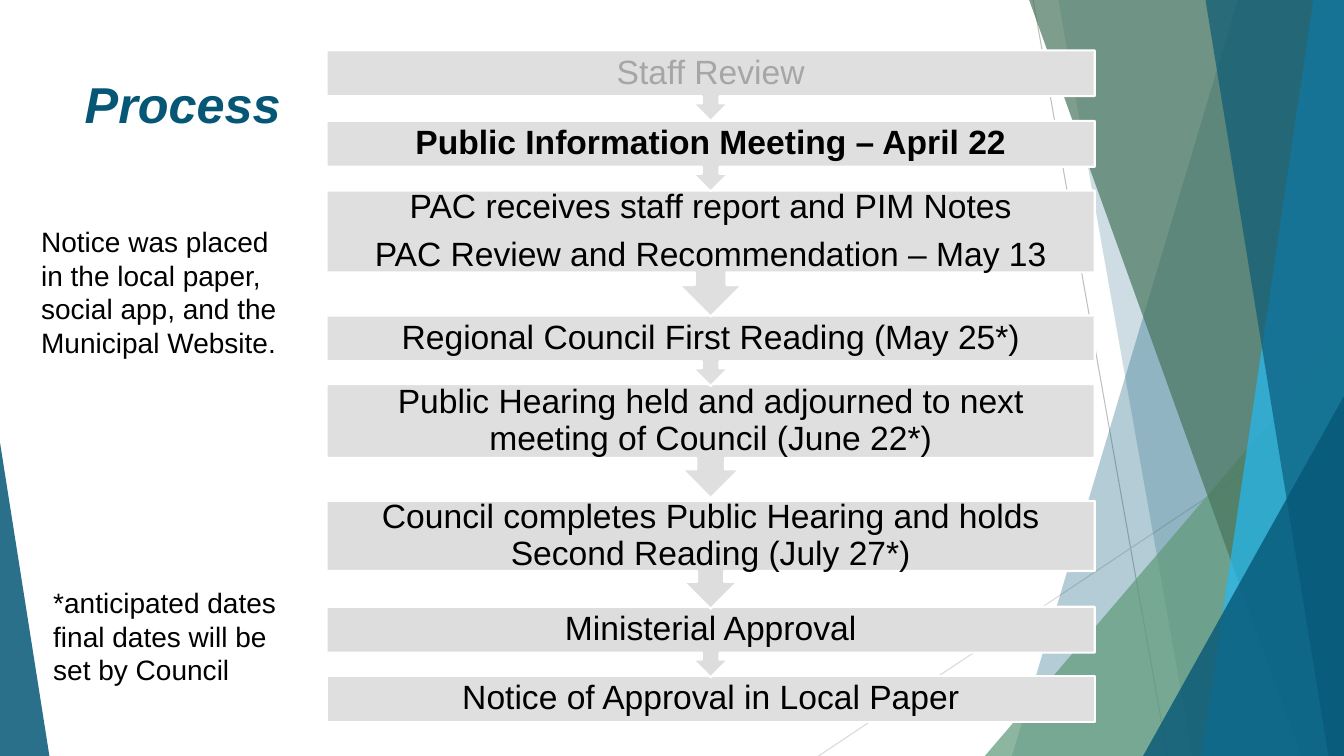
"""Build the planning process slide with its faceted backdrop."""
from dataclasses import dataclass

from lxml.etree import SubElement
from pptx import Presentation
from pptx.dml.color import RGBColor
from pptx.enum.shapes import MSO_CONNECTOR as Connector, MSO_SHAPE as Preset
from pptx.enum.text import MSO_ANCHOR as Anchor, MSO_AUTO_SIZE as AutoSize, PP_ALIGN as Align
from pptx.oxml.ns import qn
from pptx.shapes.autoshape import Shape
from pptx.slide import Slide
from pptx.text.text import TextFrame
from pptx.util import Inches, Pt

COLUMNS, ROWS = 160, 90
CELL = Inches(1 / 12)


@dataclass(frozen=True)
class Theme:
    font: str = "Arial"
    title_size: int = 36
    step_size: int = 24
    note_size: int = 20
    navy: str = "065776"
    green: str = "609B7A"
    forest: str = "48745C"
    sky: str = "23BAF4"
    text: str = "000000"
    faded: str = "A6A6A6"
    panel: str = "DFDFDF"
    panel_dark: str = "DDDDDD"
    edge: str = "FFFFFF"
    line_dark: str = "BFBFBF"
    line_light: str = "D9D9D9"


THEME = Theme()


@dataclass(frozen=True)
class Ray:
    start: tuple[float, float]
    end: tuple[float, float]
    color: str


@dataclass(frozen=True)
class Band:
    top_column: float
    bottom_column: float
    color: str
    opacity: int


@dataclass(frozen=True)
class Corner:
    column: float
    row: float
    width: float
    apex: float
    color: str
    opacity: int


@dataclass(frozen=True)
class Step:
    row: float
    height: float
    text: str
    color: str = THEME.text
    bold: bool = False
    fill: str = THEME.panel
    preset: Preset = Preset.DOWN_ARROW_CALLOUT


@dataclass(frozen=True)
class Note:
    column: float
    row: float
    height: float
    text: str


RAYS = [
    Ray((123, 0), (139, 90), THEME.line_dark),
    Ray((160, 48.36), (97.44, 90), THEME.line_light),
]
FACETS = [
    Band(147.36, 120.48, THEME.navy, 30),
    Band(126, 141.96, THEME.navy, 20),
    Corner(117.24, 40, 42.76, 1, THEME.green, 72),
    Band(122.52, 154.92, THEME.forest, 70),
    Band(156.36, 143.04, THEME.sky, 70),
    Band(143.52, 158.16, THEME.navy, 65),
    Corner(136.08, 47.16, 23.92, 1, THEME.navy, 80),
    Corner(0, 52.68, 5.88, 0, THEME.navy, 85),
]
STEPS = [
    Step(6, 8.4, "Staff Review", color=THEME.faded),
    Step(14.4, 8.4, "Public Information Meeting – April 22", bold=True),
    Step(22.68, 15, "PAC receives staff report and PIM Notes\nPAC Review and Recommendation – May 13"),
    Step(37.56, 8.4, "Regional Council First Reading (May 25*)"),
    Step(45.72, 13.56, "Public Hearing held and adjourned to next meeting of Council (June 22*)"),
    Step(59.64, 12.84, "Council completes Public Hearing and holds Second Reading (July 27*)",
         fill=THEME.panel_dark),
    Step(72.24, 8.4, "Ministerial Approval", fill=THEME.panel_dark),
    Step(80.52, 5.4, "Notice of Approval in Local Paper", preset=Preset.RECTANGLE),
]
NOTES = [
    Note(3.72, 26.16, 17.4, "Notice was placed in the local paper, social app, and the Municipal Website."),
    Note(5.16, 69.12, 13.32, "*anticipated dates final dates will be set by Council"),
]


def cells(*counts: float) -> list[int]:
    """Convert grid counts to slide lengths."""
    return [round(count * CELL) for count in counts]


def format_text(frame: TextFrame, size: int, color: str, bold: bool = False, italic: bool = False) -> None:
    """Format every run of a text frame."""
    for paragraph in frame.paragraphs:
        for run in paragraph.runs:
            run.font.name = THEME.font
            run.font.size = Pt(size)
            run.font.bold = bold
            run.font.italic = italic
            run.font.color.rgb = RGBColor.from_string(color)


def fill_facet(shape: Shape, color: str, opacity: int) -> None:
    """Give a facet its translucent fill without outline or shadow."""
    shape.shadow.inherit = False
    shape.line.fill.background()
    shape.fill.solid()
    shape.fill.fore_color.rgb = RGBColor.from_string(color)
    color_element = shape.fill._xPr.find(qn("a:solidFill"))[0]
    SubElement(color_element, qn("a:alpha"), val=str(opacity * 1000))


def draw_ray(slide: Slide, ray: Ray) -> None:
    """Draw a thin backdrop line."""
    connector = slide.shapes.add_connector(Connector.STRAIGHT, *cells(*ray.start, *ray.end))
    connector.line.color.rgb = RGBColor.from_string(ray.color)
    connector.line.width = Pt(0.75)
    SubElement(connector._element.spPr, qn("a:effectLst"))


def draw_facet(slide: Slide, facet: Band | Corner) -> None:
    """Draw a band reaching the right edge or a triangle standing on the bottom edge."""
    if isinstance(facet, Band):
        builder = slide.shapes.build_freeform(*cells(facet.top_column, 0))
        corners = [(COLUMNS, 0), (COLUMNS, ROWS), (facet.bottom_column, ROWS)]
        builder.add_line_segments([cells(*corner) for corner in corners])
        shape = builder.convert_to_shape()
    else:
        bounds = cells(facet.column, facet.row, facet.width, ROWS - facet.row)
        shape = slide.shapes.add_shape(Preset.ISOSCELES_TRIANGLE, *bounds)
        shape.adjustments[0] = facet.apex
    fill_facet(shape, facet.color, facet.opacity)


def draw_title(slide: Slide, text: str) -> None:
    """Place and format the slide title."""
    title = slide.shapes.title
    title.left, title.top, title.width, title.height = cells(8.88, 8.04, 105.24, 8.52)
    frame = title.text_frame
    frame.text = text
    frame.auto_size = AutoSize.NONE
    frame.paragraphs[0].alignment = Align.LEFT
    format_text(frame, THEME.title_size, THEME.navy, bold=True, italic=True)


def draw_step(slide: Slide, step: Step) -> None:
    """Draw one process step with its label."""
    shape = slide.shapes.add_shape(step.preset, *cells(38.88, step.row, 91.44, step.height))
    shape.shadow.inherit = False
    shape.fill.solid()
    shape.fill.fore_color.rgb = RGBColor.from_string(step.fill)
    shape.line.color.rgb = RGBColor.from_string(THEME.edge)
    shape.line.width = Pt(1.5)
    frame = shape.text_frame
    frame.text = step.text
    frame.word_wrap = True
    frame.vertical_anchor = Anchor.MIDDLE
    frame.margin_left = frame.margin_right = Inches(0.19)
    frame.margin_top = frame.margin_bottom = 0
    for paragraph in frame.paragraphs:
        paragraph.alignment = Align.CENTER
        paragraph.line_spacing = 0.9
        paragraph.space_after = Pt(8.4)
    format_text(frame, THEME.step_size, step.color, step.bold)


def draw_note(slide: Slide, note: Note) -> None:
    """Draw a side note."""
    box = slide.shapes.add_textbox(*cells(note.column, note.row, 32.04, note.height))
    box.text_frame.word_wrap = True
    box.text_frame.text = note.text
    format_text(box.text_frame, THEME.note_size, THEME.text)


def main() -> None:
    """Build and save the presentation."""
    presentation = Presentation()
    presentation.slide_width, presentation.slide_height = cells(COLUMNS, ROWS)
    slide = presentation.slides.add_slide(presentation.slide_layouts[5])
    for ray in RAYS:
        draw_ray(slide, ray)
    for facet in FACETS:
        draw_facet(slide, facet)
    draw_title(slide, "Process")
    for step in reversed(STEPS):
        draw_step(slide, step)
    for note in NOTES:
        draw_note(slide, note)
    presentation.save("out.pptx")


if __name__ == "__main__":
    main()
